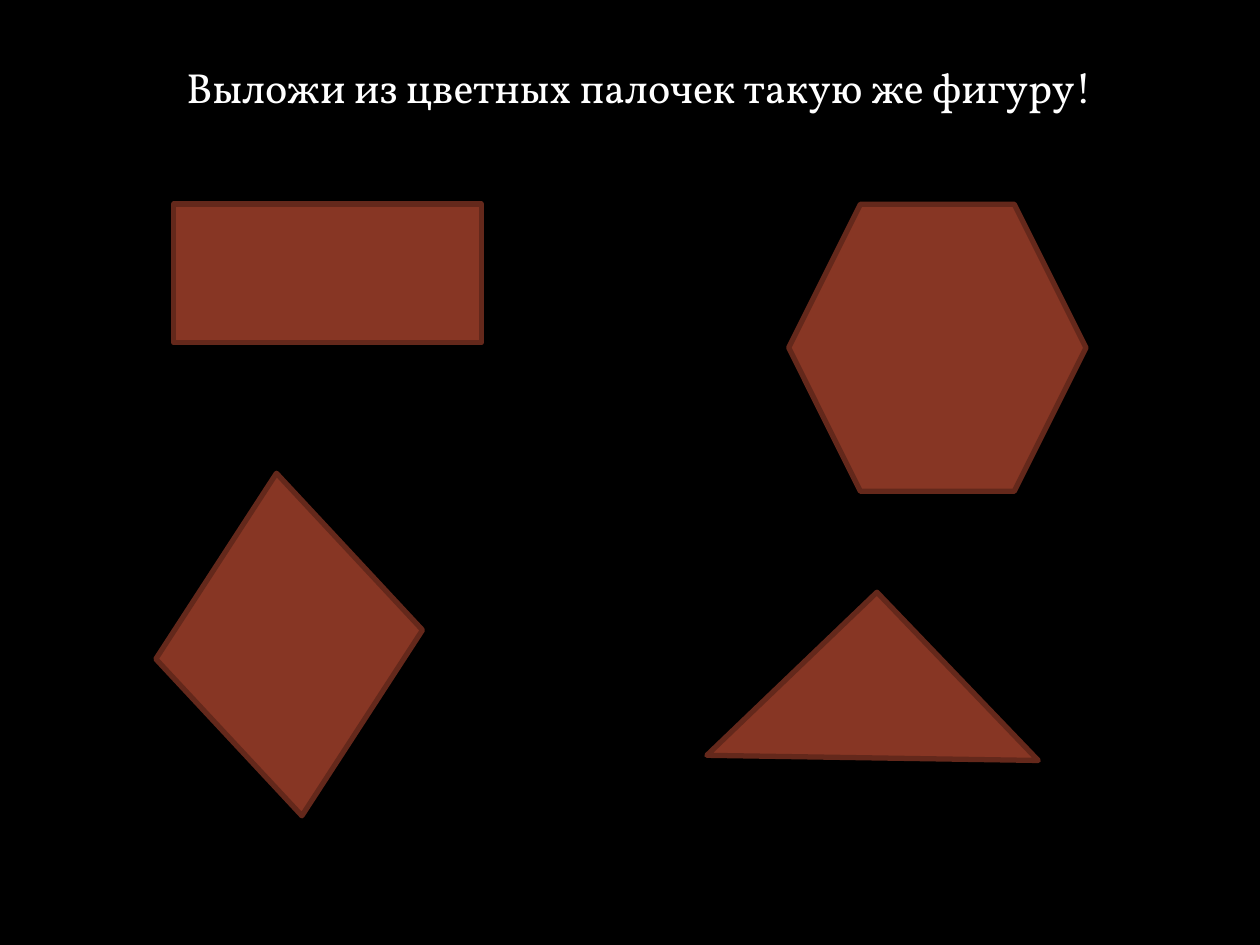
import pptx
import pptx.dml.color
import pptx.enum.shapes
import pptx.enum.text
import pptx.util

Inches = pptx.util.Inches
Figure = pptx.enum.shapes.MSO_SHAPE


def color(value):
    return pptx.dml.color.RGBColor.from_string(value)


def write(frame, text, *, font, size, fill, align=pptx.enum.text.PP_ALIGN.LEFT):
    paragraph = frame.paragraphs[0]
    paragraph.alignment = align
    run = paragraph.add_run()
    run.text = text
    run.font.name = font
    run.font.size = pptx.util.Pt(size)
    run.font.color.rgb = color(fill)


class FigureSlide:
    font = "Vollkorn"
    background = "000000"
    ink = "FFFFFF"
    figure_fill = "873624"
    figure_edge = "64281B"
    edge_width = 3

    def __init__(self, deck):
        self.slide = deck.slides.add_slide(deck.slide_layouts.get_by_name("Title Only"))
        backdrop = self.slide.background.fill
        backdrop.solid()
        backdrop.fore_color.rgb = color(self.background)

    def title(self, text, left, top, width, height):
        task = self.slide.shapes.title
        task.left, task.top = Inches(left), Inches(top)
        task.width, task.height = Inches(width), Inches(height)
        frame = task.text_frame
        frame.word_wrap = True
        frame.vertical_anchor = pptx.enum.text.MSO_ANCHOR.TOP
        frame.auto_size = pptx.enum.text.MSO_AUTO_SIZE.SHAPE_TO_FIT_TEXT
        write(frame, text, font=self.font, size=24, fill=self.ink)

    def figure(self, kind, left, top, width, height, rotation=0):
        figure = self.slide.shapes.add_shape(
            kind, Inches(left), Inches(top), Inches(width), Inches(height))
        figure.rotation = rotation
        figure.shadow.inherit = False
        figure.fill.solid()
        figure.fill.fore_color.rgb = color(self.figure_fill)
        figure.line.color.rgb = color(self.figure_edge)
        figure.line.width = pptx.util.Pt(self.edge_width)


def main():
    deck = pptx.Presentation()
    deck.slide_width, deck.slide_height = Inches(10), Inches(7.5)
    page = FigureSlide(deck)
    page.title("Выложи из цветных палочек такую же фигуру!", 1.38, 0.44, 7.64, 0.5)
    page.figure(Figure.RECTANGLE, 1.38, 1.62, 2.44, 1.1)
    page.figure(Figure.HEXAGON, 6.26, 1.62, 2.36, 2.28)
    page.figure(Figure.PARALLELOGRAM, 1.21, 4.29, 2.17, 1.65, rotation=303)
    page.figure(Figure.RIGHT_TRIANGLE, 5.99, 5.09, 1.87, 1.85, rotation=136.2)
    deck.save("out.pptx")


if __name__ == "__main__":
    main()
